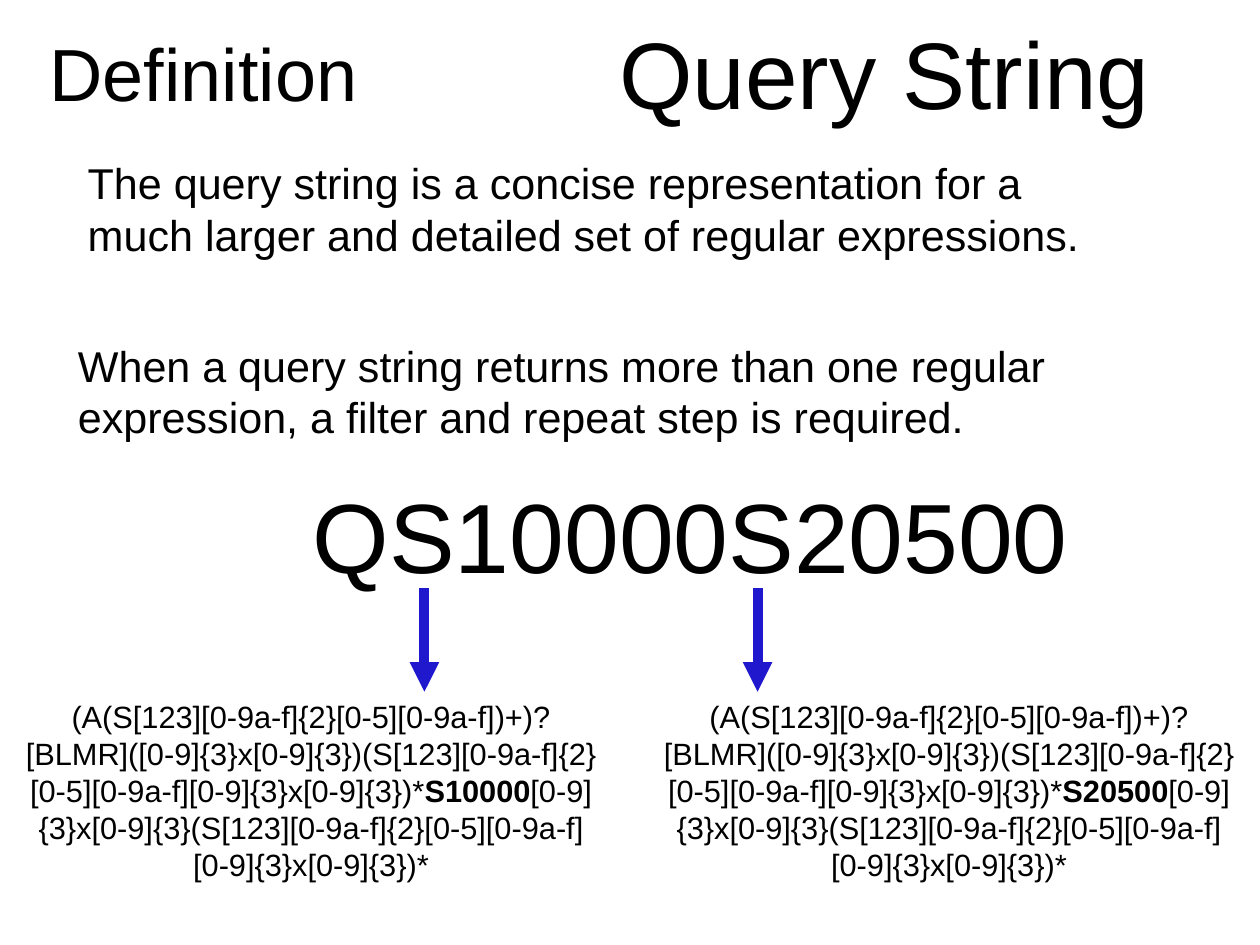
from lxml.etree import SubElement
from pptx import Presentation
from pptx.dml.color import RGBColor
from pptx.enum.shapes import MSO_CONNECTOR as Line
from pptx.enum.text import MSO_ANCHOR as Anchor, MSO_AUTO_SIZE as Fit, PP_ALIGN as Align
from pptx.oxml.ns import qn
from pptx.util import Inches, Pt

COLORS = {"text": "000000", "arrow": "1F18CD"}
FONT = "Arial"

TITLE = "Definition"
TERM = "Query String"
NOTES = [
    ("The query string is a concise representation for a much larger "
     "and detailed set of regular expressions.", (0.99, 1.77, 11.64, 1.28)),
    ("When a query string returns more than one regular expression, "
     "a filter and repeat step is required.", (0.88, 3.83, 11.36, 1.28)),
]
QUERY = "QS10000S20500"
HEAD = ("(A(S[123][0-9a-f]{2}[0-5][0-9a-f])+)?[BLMR]([0-9]{3}x[0-9]{3})"
        "(S[123][0-9a-f]{2}[0-5][0-9a-f][0-9]{3}x[0-9]{3})*")
TAIL = "[0-9]{3}x[0-9]{3}(S[123][0-9a-f]{2}[0-5][0-9a-f][0-9]{3}x[0-9]{3})*"
# symbol, left edge of its expression, x of its arrow
PARTS = [("S10000", 0.18, 4.79), ("S20500", 7.38, 8.55)]


def color(name):
    return RGBColor.from_string(COLORS[name])


def write(slide, text, at, size, align=Align.LEFT, anchor=Anchor.TOP,
          inset=0, bold="", box=None):
    """Fill a box with text, setting the part equal to bold in bold type."""
    box = box or slide.shapes.add_textbox(0, 0, 0, 0)
    box.left, box.top, box.width, box.height = map(Inches, at)
    frame = box.text_frame
    frame.word_wrap = True
    frame.auto_size = Fit.NONE
    frame.vertical_anchor = anchor
    frame.margin_left = frame.margin_right = Inches(inset)
    frame.margin_top = frame.margin_bottom = Inches(inset)
    para = frame.paragraphs[0]
    para.alignment = align
    before, found, after = text.partition(bold) if bold else (text, "", "")
    for piece in filter(None, (before, found, after)):
        run = para.add_run()
        run.text = piece
        font = run.font
        font.name, font.size = FONT, Pt(size)
        font.bold = piece == bold
        font.color.rgb = color("text")


def arrow(slide, x, top, end):
    link = slide.shapes.add_connector(
        Line.STRAIGHT, Inches(x), Inches(top), Inches(x), Inches(end))
    link.line.color.rgb = color("arrow")
    link.line.width = Pt(8)
    SubElement(link.line._get_or_add_ln(), qn("a:tailEnd"), type="triangle")
    SubElement(link._element.spPr, qn("a:effectLst"))


def main():
    deck = Presentation()
    deck.slide_width, deck.slide_height = Inches(14.22), Inches(10.67)
    slide = deck.slides.add_slide(deck.slide_layouts[5])

    write(slide, TITLE, (0.56, 0.11, 5.75, 1.4), 60,
          anchor=Anchor.MIDDLE, box=slide.shapes.title)
    write(slide, TERM, (6.67, 0.11, 6.63, 1.4), 76.8,
          align=Align.CENTER, anchor=Anchor.MIDDLE)
    for text, at in NOTES:
        write(slide, text, at, 35)
    write(slide, QUERY, (3.53, 5.36, 10.5, 1.44), 80)
    for symbol, left, x in PARTS:
        write(slide, HEAD + symbol + TAIL, (left, 7.83, 6.66, 2.19), 25,
              align=Align.CENTER, anchor=Anchor.MIDDLE, inset=0.06, bold=symbol)
        arrow(slide, x, 6.64, 7.81)

    deck.save("out.pptx")


if __name__ == "__main__":
    main()
